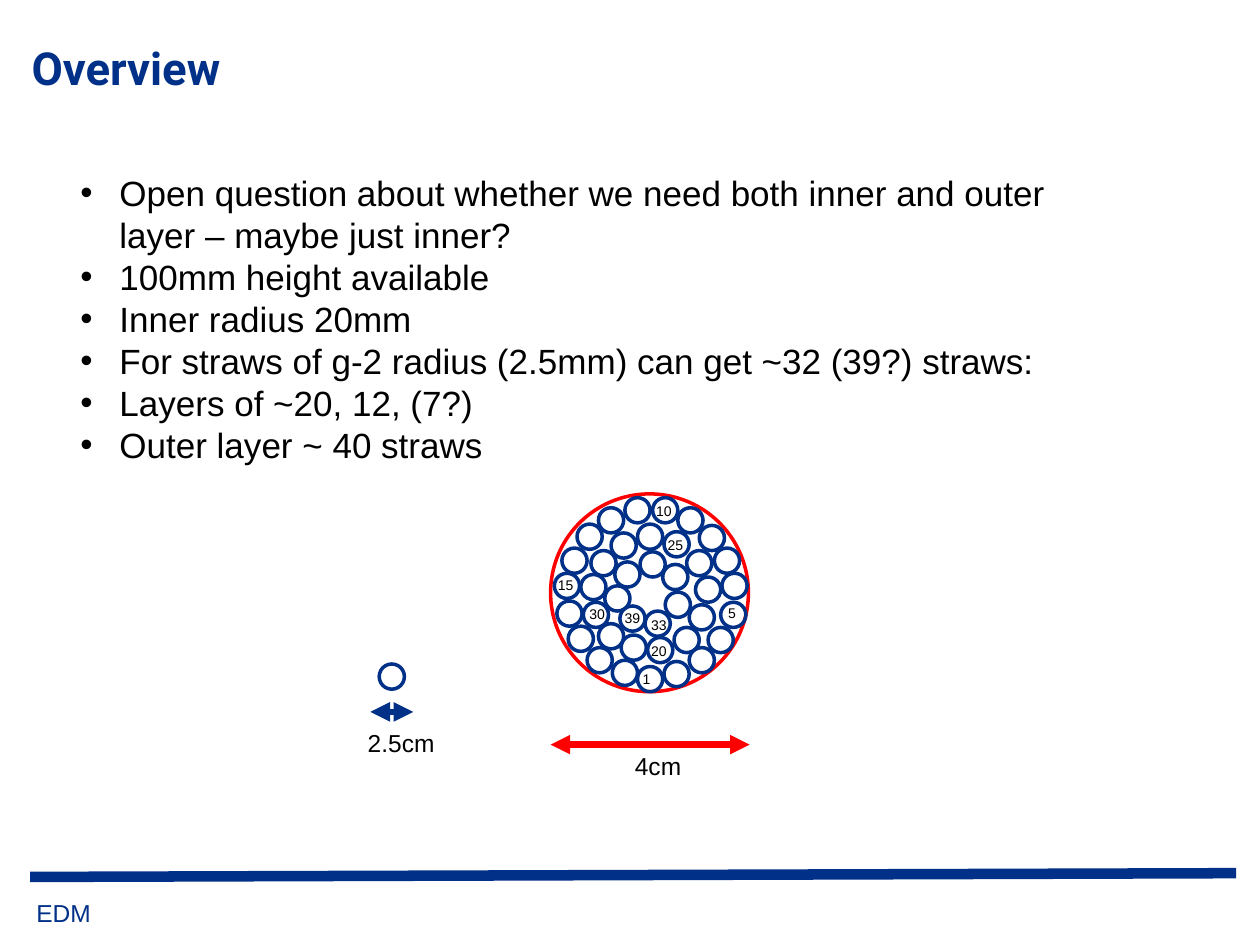
from dataclasses import dataclass

from lxml import etree
from pptx import Presentation
from pptx.dml.color import RGBColor
from pptx.enum.shapes import MSO_CONNECTOR, MSO_SHAPE
from pptx.enum.text import MSO_ANCHOR, MSO_AUTO_SIZE, PP_ALIGN
from pptx.oxml.ns import qn
from pptx.util import Emu, Pt

OVAL = MSO_SHAPE.OVAL
STRAIGHT = MSO_CONNECTOR.STRAIGHT
TOP, BOTTOM = MSO_ANCHOR.TOP, MSO_ANCHOR.BOTTOM
LEFT = PP_ALIGN.LEFT
NO_AUTOFIT = MSO_AUTO_SIZE.NONE

EMU_PER_PX = 9144
NAVY, RED, BLACK = "003087", "FF0000", "000000"
STRAW_SIZE = 20
BULLET_INDENT = 31
TITLE_ONLY_LAYOUT = 5


@dataclass(frozen=True)
class Box:
    left: int
    top: int
    width: int
    height: int


@dataclass(frozen=True)
class Arrow:
    left: int
    right: int
    y: int
    color: str
    caption: str
    caption_box: Box


@dataclass(frozen=True)
class StrawNumber:
    number: int
    left: int
    top: int
    width: int = 36


OUTER_RING = [
    (506, 529), (527, 525), (547, 514), (562, 498), (572, 478),
    (573, 455), (567, 435), (555, 417), (538, 403), (518, 395),
    (496, 395), (475, 403), (458, 416), (446, 435), (440, 455),
    (442, 477), (451, 497), (466, 514), (486, 524),
]
MIDDLE_RING = [
    (514, 506), (535, 498), (547, 480), (552, 458), (545, 437),
    (527, 422), (506, 416), (485, 423), (469, 437), (461, 456),
    (463, 478), (475, 495), (493, 504),
]
INNER_RING = [
    (512, 485), (528, 470), (526, 448), (508, 438), (488, 446),
    (480, 465), (492, 481),
]
SAMPLE_STRAW = (301, 527)
TUBE = Box(437, 392, 157, 157)

STRAW_NUMBERS = [
    StrawNumber(1, 506, 527, 14),
    StrawNumber(5, 568, 475),
    StrawNumber(10, 511, 394),
    StrawNumber(15, 433, 453),
    StrawNumber(20, 507, 505),
    StrawNumber(25, 520, 421),
    StrawNumber(30, 458, 476),
    StrawNumber(33, 507, 484),
    StrawNumber(39, 486, 479),
]
ARROWS = [
    Arrow(437, 595, 591, RED, "4cm", Box(494, 591, 171, 34)),
    Arrow(294, 328, 565, NAVY, "2.5cm", Box(282, 573, 171, 34)),
]
POINTS = [
    "Open question about whether we need both inner and outer layer – maybe just inner?",
    "100mm height available",
    "Inner radius 20mm",
    "For straws of g-2 radius (2.5mm) can get ~32 (39?) straws:",
    "Layers of ~20, 12, (7?)",
    "Outer layer ~ 40 straws",
]


def px(length: int) -> Emu:
    return Emu(length * EMU_PER_PX)


def rgb(color: str) -> RGBColor:
    return RGBColor.from_string(color)


def place(shape, box: Box) -> None:
    shape.left, shape.top = px(box.left), px(box.top)
    shape.width, shape.height = px(box.width), px(box.height)


def add_bullet(paragraph) -> None:
    properties = paragraph._p.get_or_add_pPr()
    properties.set("marL", str(px(BULLET_INDENT)))
    properties.set("indent", str(-px(BULLET_INDENT)))
    bullet_color = etree.SubElement(properties, qn("a:buClr"))
    etree.SubElement(bullet_color, qn("a:srgbClr"), val=BLACK)
    etree.SubElement(properties, qn("a:buFont"), typeface="Arial")
    etree.SubElement(properties, qn("a:buChar"), char="•")


def write(shape, lines: list[str], *, size: int, font: str = "Arial",
          color: str = BLACK, bold: bool = False, anchor=TOP,
          insets: tuple[int, int, int, int] = (10, 5, 10, 5),
          bullets: bool = False, leading: int | None = None) -> None:
    frame = shape.text_frame
    frame.word_wrap = True
    frame.auto_size = NO_AUTOFIT
    frame.vertical_anchor = anchor
    frame.margin_left, frame.margin_top, frame.margin_right, frame.margin_bottom = map(px, insets)
    for index, line in enumerate(lines):
        paragraph = frame.paragraphs[0] if index == 0 else frame.add_paragraph()
        paragraph.alignment = LEFT
        if leading:
            paragraph.line_spacing = Pt(leading)
        if bullets:
            add_bullet(paragraph)
        run = paragraph.add_run()
        run.text = line
        run.font.size = Pt(size)
        run.font.name = font
        run.font.bold = bold
        run.font.color.rgb = rgb(color)


def add_text(slide, box: Box, lines: list[str], **text_format) -> None:
    textbox = slide.shapes.add_textbox(0, 0, 0, 0)
    place(textbox, box)
    write(textbox, lines, **text_format)


def add_ring(slide, box: Box, color: str) -> None:
    ring = slide.shapes.add_shape(OVAL, 0, 0, 0, 0)
    place(ring, box)
    ring.shadow.inherit = False
    ring.fill.background()
    ring.line.color.rgb = rgb(color)
    ring.line.width = Pt(2)


def add_straw(slide, left: int, top: int) -> None:
    add_ring(slide, Box(left, top, STRAW_SIZE, STRAW_SIZE), NAVY)


def add_line(slide, start: tuple[int, int], end: tuple[int, int],
             color: str, width: float, arrowheads: bool = False) -> None:
    connector = slide.shapes.add_connector(STRAIGHT, *map(px, start + end))
    connector.line.color.rgb = rgb(color)
    connector.line.width = Pt(width)
    if arrowheads:
        outline = connector.line._get_or_add_ln()
        for end_tag in ("a:headEnd", "a:tailEnd"):
            etree.SubElement(outline, qn(end_tag), type="triangle")
    etree.SubElement(connector._element.spPr, qn("a:effectLst"))


def main() -> None:
    presentation = Presentation()
    presentation.slide_width, presentation.slide_height = px(1000), px(750)
    slide = presentation.slides.add_slide(presentation.slide_layouts[TITLE_ONLY_LAYOUT])

    add_line(slide, (24, 696), (981, 693), NAVY, 6)
    add_text(slide, Box(19, 703, 645, 39), ["EDM"], size=14, color=NAVY,
             insets=(10, 10, 10, 10))
    title = slide.shapes.title
    place(title, Box(25, 28, 950, 47))
    write(title, ["Overview"], size=26, font="Roboto", color=NAVY, bold=True,
          anchor=BOTTOM, insets=(0, 0, 0, 0))
    add_text(slide, Box(54, 98, 830, 313), POINTS, size=20,
             insets=(10, 38, 10, 5), bullets=True, leading=24)

    add_ring(slide, TUBE, RED)
    for left, top in [SAMPLE_STRAW, *OUTER_RING, *MIDDLE_RING, *INNER_RING]:
        add_straw(slide, left, top)
    for label in STRAW_NUMBERS:
        add_text(slide, Box(label.left, label.top, label.width, 24),
                 [str(label.number)], size=8)
    for arrow in ARROWS:
        add_line(slide, (arrow.left, arrow.y), (arrow.right, arrow.y),
                 arrow.color, 3.75, arrowheads=True)
        add_text(slide, arrow.caption_box, [arrow.caption], size=14)

    presentation.save("out.pptx")


if __name__ == "__main__":
    main()
